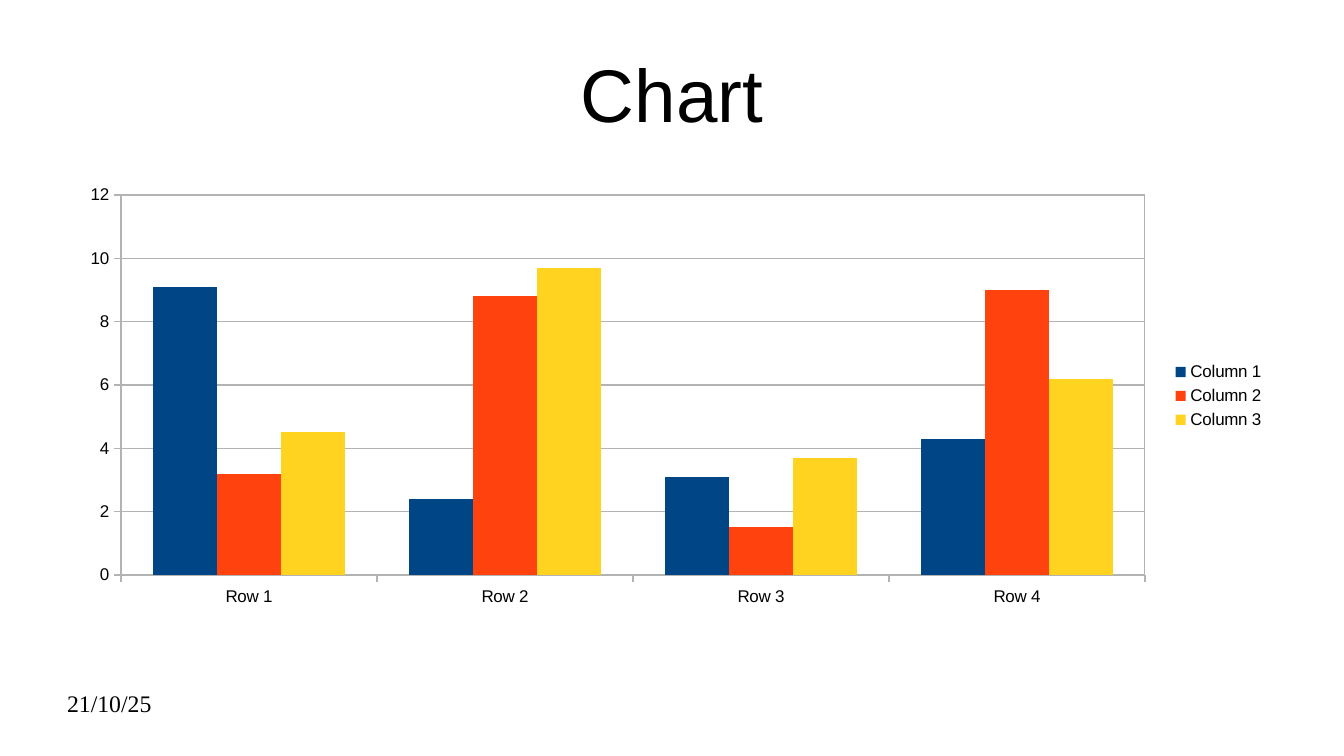
from dataclasses import dataclass

from lxml.etree import SubElement
from pptx import Presentation
from pptx.chart.data import CategoryChartData as ChartData
from pptx.dml.color import RGBColor as RGB
from pptx.enum.chart import XL_CHART_TYPE as CT, XL_LEGEND_POSITION as LP, XL_TICK_MARK as TM
from pptx.enum.text import MSO_ANCHOR as MA, PP_ALIGN as PA
from pptx.oxml import parse_xml
from pptx.oxml.ns import nsdecls, qn
from pptx.util import Pt


@dataclass(frozen=True)
class Theme:
    text: str = "000000"
    grid: str = "B3B3B3"
    series: tuple = ("004586", "FF420E", "FFD320")
    sans: str = "Arial"
    serif: str = "Times New Roman"
    title: int = 44
    date: int = 14
    chart: int = 10


def px(n):
    return round(n * 914400 / 122)


def apply(obj, **values):
    for name, value in values.items():
        setattr(obj, name, value)


class Deck:
    """Build slides from one theme with pixel lengths."""

    def __init__(self, theme, width, height):
        self.theme = theme
        self.prs = Presentation()
        apply(self.prs, slide_width=px(width), slide_height=px(height))
        self.s = self.prs.slides.add_slide(self.prs.slide_layouts[6])

    def font(self, font, name, size):
        apply(font, name=name, size=Pt(size), bold=False)
        font.color.rgb = RGB.from_string(self.theme.text)

    def line(self, line):
        line.color.rgb = RGB.from_string(self.theme.grid)
        line.width = Pt(0)

    def text(self, box, text, name, size, align=PA.LEFT, anchor=MA.TOP):
        tf = self.s.shapes.add_textbox(*map(px, box)).text_frame
        apply(tf, word_wrap=True, vertical_anchor=anchor, margin_left=0,
              margin_right=0, margin_top=0, margin_bottom=0)
        p = tf.paragraphs[0]
        p.alignment = align
        r = p.add_run()
        r.text = text
        self.font(r.font, name, size)

    def columns(self, box, plot_box, cats, series):
        data = ChartData()
        data.categories = cats
        for name, values in series.items():
            data.add_series(name, values)
        chart = self.s.shapes.add_chart(CT.COLUMN_CLUSTERED, *map(px, box), data).chart
        self.font(chart.font, self.theme.sans, self.theme.chart)
        apply(chart, has_title=False, has_legend=True)
        apply(chart.legend, position=LP.RIGHT, include_in_layout=False)
        plot = chart.plots[0]
        apply(plot, gap_width=100, overlap=0, vary_by_categories=False)
        for ser, color in zip(plot.series, self.theme.series):
            ser.format.fill.solid()
            ser.format.fill.fore_color.rgb = RGB.from_string(color)
        for axis in (chart.category_axis, chart.value_axis):
            apply(axis, major_tick_mark=TM.OUTSIDE, minor_tick_mark=TM.NONE)
            self.line(axis.format.line)
        axis = chart.value_axis
        apply(axis, minimum_scale=0, maximum_scale=12, major_unit=2, has_major_gridlines=True)
        self.line(axis.major_gridlines.format.line)
        self.wall(plot, box, plot_box)

    def wall(self, plot, box, plot_box):
        area = plot._element.getparent()
        for old in area.findall(qn("c:layout")):
            area.remove(old)
        layout = parse_xml(f"<c:layout {nsdecls('c')}><c:manualLayout/></c:layout>")
        x, y, w, h = box
        left, top, width, height = plot_box
        values = {"layoutTarget": "inner", "xMode": "edge", "yMode": "edge",
                  "x": (left - x) / w, "y": (top - y) / h, "w": width / w, "h": height / h}
        for tag, value in values.items():
            SubElement(layout[0], qn(f"c:{tag}")).set("val", str(value))
        area.insert(0, layout)
        area.append(parse_xml(
            f"<c:spPr {nsdecls('c', 'a')}><a:noFill/><a:ln w='0'><a:solidFill>"
            f"<a:srgbClr val='{self.theme.grid}'/></a:solidFill></a:ln></c:spPr>"))


def main():
    theme = Theme()
    deck = Deck(theme, 1344, 756)
    deck.text((67, 30, 1210, 126), "Chart", theme.sans, theme.title, PA.CENTER, MA.MIDDLE)
    deck.columns((67, 177, 1210, 438), (121, 195, 1024, 380),
                 ["Row 1", "Row 2", "Row 3", "Row 4"],
                 {"Column 1": (9.1, 2.4, 3.1, 4.3),
                  "Column 2": (3.2, 8.8, 1.5, 9),
                  "Column 3": (4.5, 9.7, 3.7, 6.2)})
    deck.text((67, 689, 314, 51), "21/10/25", theme.serif, theme.date)
    deck.prs.save("out.pptx")


if __name__ == "__main__":
    main()
